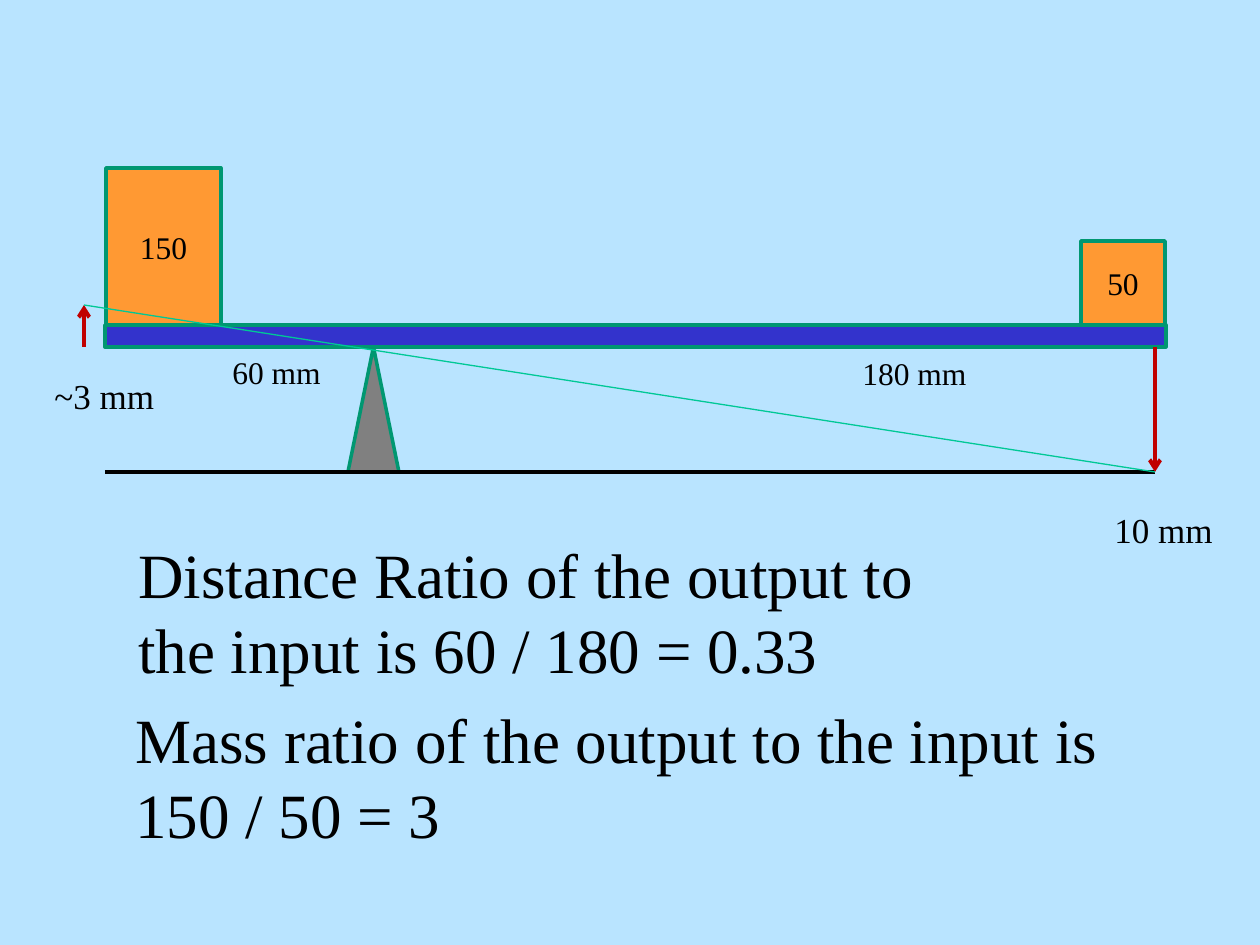
from lxml.etree import SubElement
from pptx import Presentation
from pptx.dml.color import RGBColor
from pptx.enum.shapes import MSO_CONNECTOR, MSO_SHAPE
from pptx.enum.text import MSO_ANCHOR, PP_ALIGN
from pptx.oxml.ns import qn
from pptx.util import Emu, Pt

FONT = "Times New Roman"
BLACK, OUTLINE, RED = "000000", "009771", "C00000"
ORANGE, BLUE, GRAY = "FF9933", "3333CC", "808080"
SKY, GREEN = "B9E4FF", "00C896"


def px(length):
    """Turn pixels at 126 to the inch into EMU."""
    return Emu(round(length * 914400 / 126))


def color(value):
    """Turn a hex string into a colour."""
    return RGBColor.from_string(value)


def write(frame, text, size, align=PP_ALIGN.LEFT):
    """Put one paragraph of text into a frame."""
    para = frame.paragraphs[0]
    para.text = text
    para.alignment = align
    para.font.name = FONT
    para.font.size = Pt(size)
    para.font.color.rgb = color(BLACK)


def add_block(page, kind, bounds, fill, text=None):
    """Add an outlined shape, with a centred label if text is given."""
    block = page.shapes.add_shape(kind, *map(px, bounds))
    block.shadow.inherit = False
    block.fill.solid()
    block.fill.fore_color.rgb = color(fill)
    block.line.color.rgb = color(OUTLINE)
    block.line.width = Pt(2)
    if text:
        block.text_frame.vertical_anchor = MSO_ANCHOR.MIDDLE
        write(block.text_frame, text, 18, PP_ALIGN.CENTER)


def add_text(page, bounds, text, size, wrap=True):
    """Add a text box."""
    box = page.shapes.add_textbox(*map(px, bounds))
    box.text_frame.word_wrap = wrap
    write(box.text_frame, text, size)


def add_line(page, start, end, stroke, width=2.25, arrow=False):
    """Add a straight line, with an arrowhead at its end if asked."""
    line = page.shapes.add_connector(MSO_CONNECTOR.STRAIGHT, *map(px, start + end))
    line.line.color.rgb = color(stroke)
    line.line.width = Pt(width)
    if arrow:
        SubElement(line.line._get_or_add_ln(), qn("a:tailEnd"), type="arrow")
    SubElement(line._element.spPr, qn("a:effectLst"))


def main():
    """Build the lever slide."""
    deck = Presentation()
    deck.slide_width, deck.slide_height = px(1260), px(945)
    page = deck.slides.add_slide(deck.slide_layouts[6])
    page.background.fill.solid()
    page.background.fill.fore_color.rgb = color(SKY)

    left, right = 84, 1155
    raised, beam_bottom, ground = 305, 347, 472
    add_block(page, MSO_SHAPE.ISOSCELES_TRIANGLE, (348, beam_bottom, 51, 125), GRAY)
    add_block(page, MSO_SHAPE.RECTANGLE, (105, 325, 1061, 22), BLUE)
    add_line(page, (105, ground), (right, ground), BLACK)
    add_line(page, (left, beam_bottom), (left, raised), RED, arrow=True)
    add_line(page, (right, beam_bottom), (right, ground), RED, arrow=True)

    add_text(page, (1102, 502, 125, 55), "10 mm", 20, wrap=False)
    add_text(page, (42, 368, 126, 55), "~3 mm", 20, wrap=False)
    add_text(page, (850, 348, 210, 50), "180 mm", 18)
    add_text(page, (220, 347, 210, 50), "60 mm", 18)

    add_block(page, MSO_SHAPE.RECTANGLE, (1081, 241, 84, 84), ORANGE, "50")
    add_block(page, MSO_SHAPE.RECTANGLE, (106, 168, 115, 157), ORANGE, "150")

    add_text(page, (123, 694, 1013, 165),
             "Mass ratio of the output to the input is\v150 / 50 = 3", 36)
    add_text(page, (126, 529, 819, 165),
             "Distance Ratio of the output to the input is 60 / 180 = 0.33", 36)
    add_line(page, (right, ground), (left, raised), GREEN, width=0.75)

    deck.save("out.pptx")


if __name__ == "__main__":
    main()
